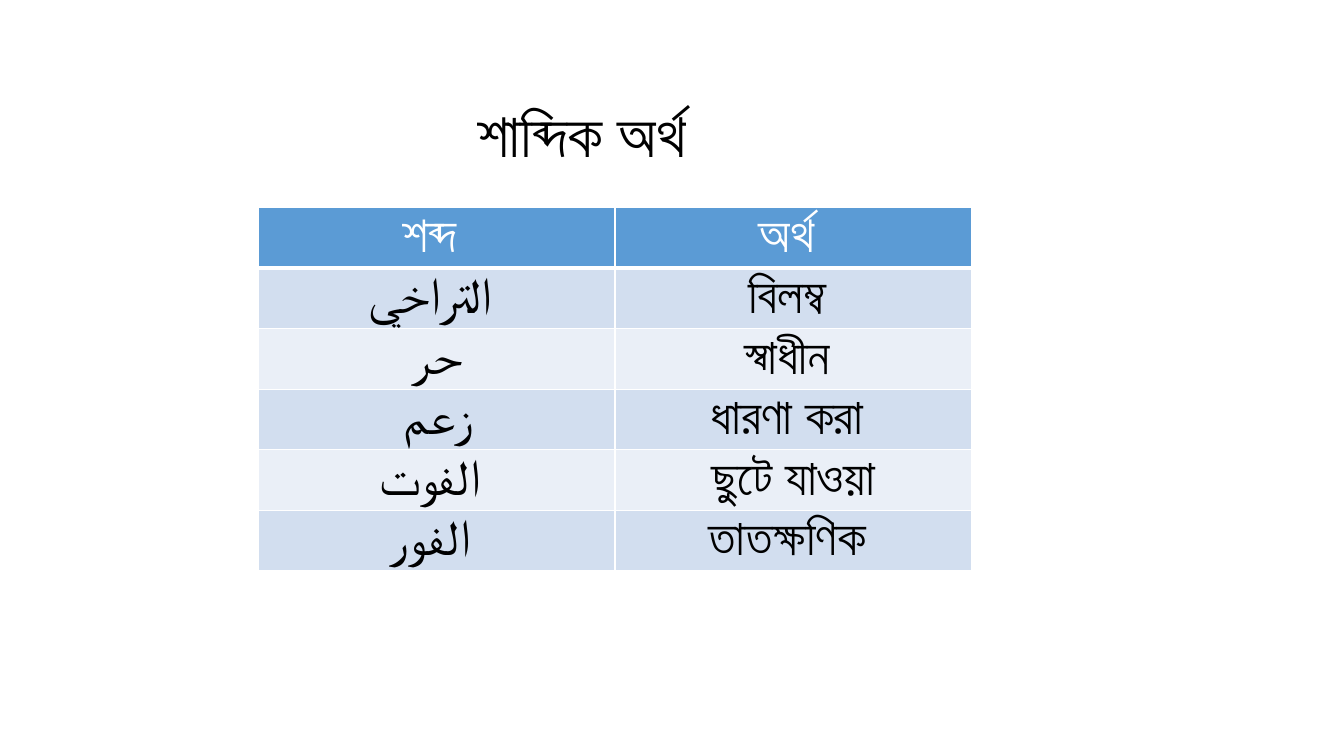
from dataclasses import dataclass

from lxml import etree
from pptx import Presentation
from pptx.dml.color import RGBColor
from pptx.enum.text import MSO_ANCHOR, PP_ALIGN
from pptx.oxml.ns import qn
from pptx.util import Inches, Pt

CENTER = PP_ALIGN.CENTER
MIDDLE = MSO_ANCHOR.MIDDLE


@dataclass(frozen=True)
class Theme:
    font: str = "Calibri"
    title_size: int = 44
    cell_size: int = 36
    text: str = "000000"
    light: str = "FFFFFF"
    header: str = "5B9BD5"
    bands: tuple = ("D2DEEF", "EAEFF7")


theme = Theme()


def format_text(para, size, color, bold=False):
    para.alignment = CENTER
    for span in para.runs:
        span.font.name = theme.font
        span.font.size = Pt(size)
        span.font.bold = bold
        span.font.color.rgb = RGBColor.from_string(color)


def add_borders(cell, bottom_width):
    properties = cell._tc.get_or_add_tcPr()
    widths = {"a:lnL": 1, "a:lnR": 1, "a:lnT": 1, "a:lnB": bottom_width}
    for position, (side, width) in enumerate(widths.items()):
        line = etree.Element(qn(side), w=str(Pt(width)))
        fill = etree.SubElement(line, qn("a:solidFill"))
        etree.SubElement(fill, qn("a:srgbClr"), val=theme.light)
        properties.insert(position, line)


# Page
deck = Presentation()
deck.slide_width, deck.slide_height = Inches(13.33), Inches(7.5)
page = deck.slides.add_slide(deck.slide_layouts[5])

# Title
title = page.shapes.title
title.left, title.top = Inches(4.55), Inches(0.89)
title.width, title.height = Inches(2.59), Inches(0.94)
title.text_frame.text = "শাব্দিক অর্থ "
title.text_frame.vertical_anchor = MIDDLE
title.text_frame.paragraphs[0].line_spacing = 0.9
format_text(title.text_frame.paragraphs[0], theme.title_size, theme.text)

# Word and meaning table
words = [
    ("শব্দ ", "অর্থ "),
    ("التراخي ", "বিলম্ব "),
    ("حر", "স্বাধীন "),
    ("زعم", "ধারণা করা "),
    ("الفوت ", "ছুটে যাওয়া"),
    ("الفور ", "তাতক্ষণিক "),
]
table = page.shapes.add_table(
    len(words), 2, Inches(2.56), Inches(2.06), Inches(7.08), Inches(4.2)
).table

for row_index, row_words in enumerate(words):
    is_header = row_index == 0
    table.rows[row_index].height = Inches(0.53 if row_index < 2 else 0.58)
    fill_color = theme.header if is_header else theme.bands[(row_index - 1) % 2]
    text_color = theme.light if is_header else theme.text
    for cell, word in zip(table.rows[row_index].cells, row_words):
        cell.text_frame.text = word
        format_text(cell.text_frame.paragraphs[0], theme.cell_size, text_color, is_header)
        cell.fill.solid()
        cell.fill.fore_color.rgb = RGBColor.from_string(fill_color)
        add_borders(cell, 3 if is_header else 1)

deck.save("out.pptx")
